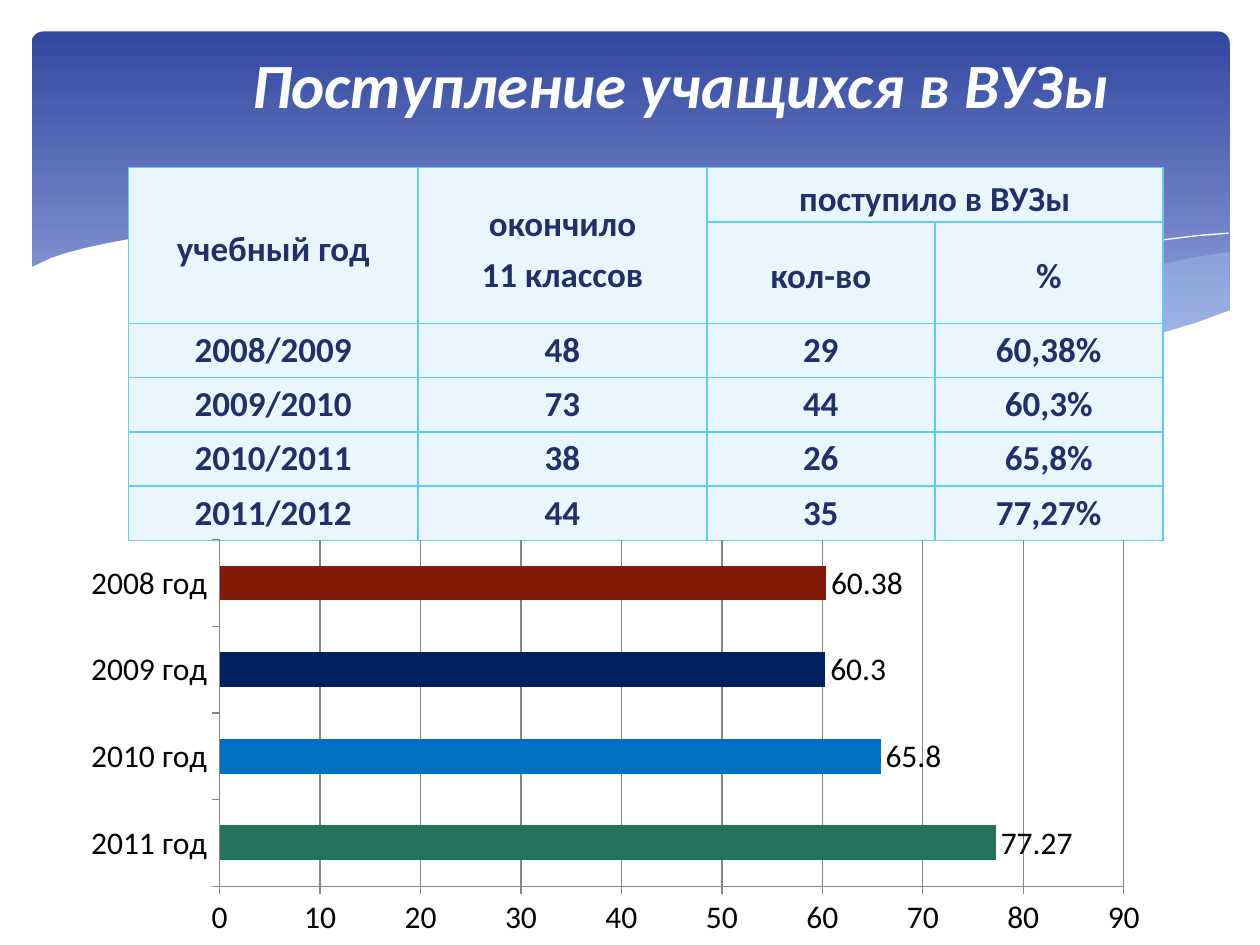
from dataclasses import dataclass
from typing import Optional

from lxml import etree
from pptx import Presentation
from pptx import util as u
from pptx.chart.data import CategoryChartData
from pptx.dml.color import RGBColor
from pptx.enum import chart as ch, shapes, text
from pptx.oxml import parse_xml
from pptx.oxml.ns import nsdecls, qn


@dataclass(frozen=True)
class Theme:
    font: str = "Calibri"
    white: str = "FFFFFF"
    black: str = "000000"
    banner_top: str = "31489F"
    banner_bottom: str = "95A4DE"
    wave: str = "B4DCFA"
    cell: str = "EAF6FD"
    border: str = "5ECCF3"
    table_text: str = "21306A"
    grid: str = "868686"
    title_size: int = 36
    table_size: int = 20
    chart_size: int = 18


@dataclass(frozen=True)
class Wave:
    points: tuple
    fill: Optional[str] = None
    alpha: int = 100


@dataclass(frozen=True)
class Bar:
    year: str
    percent: float
    color: str


T = Theme()

WAVES = (
    Wave(((702.7, 144), (682.6, 146.9), (663.1, 151.2), (641.5, 155.5), (619.9, 160.6),
          (579.6, 170.6), (542.2, 178.6), (508.3, 185), (475.9, 190.8), (497.5, 193.7),
          (527, 197.3), (553.7, 199.4), (586.1, 200.2), (614.9, 198.7), (640.1, 195.8),
          (663.1, 190.8), (683.3, 185), (702.7, 177.8)), T.wave, 29),
    Wave(((643, 196.6), (602.6, 190.8), (558, 182.9), (508.3, 172.8), (452.9, 159.8),
          (420.5, 151.9), (389.5, 146.2), (352.1, 139.7), (302.4, 134.6), (259.9, 133.2),
          (205.9, 137.5), (246.2, 143.3), (290.9, 151.9), (353.5, 167), (407.5, 178.6),
          (468, 190.1), (519.8, 197.3), (565.2, 200.2), (610.6, 199.4)), T.wave, 40),
    Wave(((222.5, 140.4), (261.4, 136.1), (311.8, 134.6), (367.2, 138.2), (419, 144),
          (478.8, 153.4), (547.2, 167.8), (598.3, 180.7), (653, 195.8))),
    Wave(((441.4, 185), (500.4, 169.2), (558.7, 155.5), (623.5, 143.3), (655.2, 138.2),
          (684.7, 134.6), (702, 133.2))),
    Wave(((703.4, 177.1), (684, 184.3), (662.4, 190.8), (638.6, 195.1), (612, 198),
          (582.5, 199.4), (547.9, 198), (509.8, 194.4), (466.6, 188.6), (416.9, 180),
          (362.2, 167.8), (321.8, 158.4), (281.5, 149), (244.8, 141.8), (210.2, 136.8),
          (165.6, 133.2), (127.4, 132.5), (95, 133.9), (76.3, 136.1), (61.2, 139),
          (48.2, 141.8), (37.4, 144.7), (28.8, 147.6), (16.6, 153.4), (16.6, 236.9),
          (703.4, 236.9)), T.white),
)

HEADER_ROWS = 2
COLUMNS = (165.6, 164.9, 130.3, 130.3)
ROWS = (31, 58, 31, 31, 31, 31)
ADMISSIONS = (
    ("учебный год", "окончило\n11 классов", "поступило в ВУЗы", ""),
    ("", "", "кол-во", "%"),
    ("2008/2009", "48", "29", "60,38%"),
    ("2009/2010", "73", "44", "60,3%"),
    ("2010/2011", "38", "26", "65,8%"),
    ("2011/2012", "44", "35", "77,27%"),
)
MERGES = ((0, 0, 1, 0), (0, 1, 1, 1), (0, 2, 0, 3))

BARS = (
    Bar("2011 год", 77.27, "23735D"),
    Bar("2010 год", 65.8, "0070C0"),
    Bar("2009 год", 60.3, "002060"),
    Bar("2008 год", 60.38, "821A08"),
)


def rgb(color: str) -> RGBColor:
    return RGBColor.from_string(color)


def write(tf, content: str, *, size: int, color: str, align, bold=True, italic=False,
          spacing: Optional[float] = None):
    p = tf.paragraphs[0]
    p.alignment = align
    p.line_spacing = spacing
    for i, line in enumerate(content.split("\n")):
        if i:
            p.add_line_break()
        r = p.add_run()
        r.text = line
        f = r.font
        f.name, f.size, f.bold, f.italic = T.font, u.Pt(size), bold, italic
        f.color.rgb = rgb(color)
    return p


def draw_banner(s) -> None:
    sp = s.shapes.add_shape(shapes.MSO_SHAPE.ROUNDED_RECTANGLE,
                            u.Pt(18), u.Pt(18), u.Pt(684.7), u.Pt(194.4))
    sp.adjustments[0] = 0.034
    sp.shadow.inherit = False
    sp.line.fill.background()
    sp.fill.gradient()
    sp.fill.gradient_angle = 270
    stops = sp.fill.gradient_stops
    for stop, color, position in zip(stops, (T.banner_top, T.banner_bottom), (0, 0.9)):
        stop.color.rgb = rgb(color)
        stop.position = position


def draw_wave(s, wave: Wave) -> None:
    """Draw a filled band, or an open white hairline when there is no fill."""
    first, *rest = [(u.Pt(x), u.Pt(y)) for x, y in wave.points]
    builder = s.shapes.build_freeform(*first)
    builder.add_line_segments(rest, close=wave.fill is not None)
    sp = builder.convert_to_shape()
    sp.shadow.inherit = False
    if wave.fill is None:
        sp.fill.background()
        sp.line.color.rgb = rgb(T.white)
        sp.line.width = u.Pt(0)
        return
    sp.line.fill.background()
    sp.fill.solid()
    sp.fill.fore_color.rgb = rgb(wave.fill)
    if wave.alpha < 100:
        color = sp.element.spPr.find(qn("a:solidFill"))[0]
        etree.SubElement(color, qn("a:alpha"), val=str(wave.alpha * 1000))


def draw_title(s) -> None:
    title = s.shapes.title
    s.shapes.element.append(title.element)  # in front of the banner
    title.left, title.top, title.width, title.height = map(u.Pt, (101.5, 22.3, 540.7, 51.1))
    tf = title.text_frame
    tf.word_wrap = False
    tf.auto_size = text.MSO_AUTO_SIZE.SHAPE_TO_FIT_TEXT
    tf.vertical_anchor = text.MSO_ANCHOR.MIDDLE
    p = write(tf, "Поступление учащихся в ВУЗы", size=T.title_size, color=T.white,
              align=text.PP_ALIGN.LEFT, italic=True)
    pPr = p._p.get_or_add_pPr()
    pPr.set("marL", "0")
    pPr.set("indent", str(u.Pt(35.3)))
    shadow = parse_xml(
        f'<a:effectLst {nsdecls("a")}><a:outerShdw blurRad="{u.Pt(4)}" dist="{u.Pt(3)}" '
        f'dir="2700000"><a:srgbClr val="{T.black}"><a:alpha val="60000"/></a:srgbClr>'
        '</a:outerShdw></a:effectLst>')
    p.runs[0].font._element.find(qn("a:solidFill")).addnext(shadow)


def add_borders(cell) -> None:
    tcPr = cell._tc.get_or_add_tcPr()
    for side in ("lnL", "lnR", "lnT", "lnB"):
        tcPr.append(parse_xml(
            f'<a:{side} {nsdecls("a")} w="{u.Pt(1)}"><a:solidFill>'
            f'<a:srgbClr val="{T.border}"/></a:solidFill></a:{side}>'))


def draw_table(s) -> None:
    table = s.shapes.add_table(len(ROWS), len(COLUMNS), u.Pt(73.4), u.Pt(95.8),
                               u.Pt(sum(COLUMNS)), u.Pt(sum(ROWS))).table
    for column, width in zip(table.columns, COLUMNS):
        column.width = u.Pt(width)
    for row, height in zip(table.rows, ROWS):
        row.height = u.Pt(height)
    for i, values in enumerate(ADMISSIONS):
        for j, value in enumerate(values):
            cell = table.cell(i, j)
            add_borders(cell)
            cell.fill.solid()
            cell.fill.fore_color.rgb = rgb(T.cell)
            cell.vertical_anchor = text.MSO_ANCHOR.MIDDLE
            cell.margin_left = cell.margin_right = u.Pt(5)
            cell.margin_top = cell.margin_bottom = u.Pt(0)
            if value:
                write(cell.text_frame, value, size=T.table_size, color=T.table_text,
                      align=text.PP_ALIGN.CENTER, spacing=1.2 if i < HEADER_ROWS else None)
    for top, left, bottom, right in MERGES:
        table.cell(top, left).merge(table.cell(bottom, right))


def draw_chart(s) -> None:
    data = CategoryChartData()
    data.categories = [bar.year for bar in BARS]
    data.add_series("Series 1", [bar.percent for bar in BARS])
    chart = s.shapes.add_chart(ch.XL_CHART_TYPE.BAR_CLUSTERED, u.Pt(39.6), u.Pt(303.8),
                               u.Pt(624.2), u.Pt(236.2), data).chart
    chart.has_title = chart.has_legend = False
    chart.font.name, chart.font.size = T.font, u.Pt(T.chart_size)
    chart.font.color.rgb = rgb(T.black)
    plot = chart.plots[0]
    plot.gap_width = 150
    plot.vary_by_categories = False
    plot.has_data_labels = True
    plot.data_labels.show_value = True
    for i, bar in enumerate(BARS):
        fill = plot.series[0].points[i].format.fill
        fill.solid()
        fill.fore_color.rgb = rgb(bar.color)
    value_axis, category_axis = chart.value_axis, chart.category_axis
    value_axis.minimum_scale = 0
    value_axis.has_major_gridlines = True
    for axis in (value_axis, category_axis):
        axis.major_tick_mark = ch.XL_TICK_MARK.OUTSIDE
    for part in (value_axis, category_axis, value_axis.major_gridlines):
        part.format.line.color.rgb = rgb(T.grid)
        part.format.line.width = u.Pt(0.75)


def main() -> None:
    prs = Presentation()
    prs.slide_width, prs.slide_height = u.Pt(720), u.Pt(540)
    s = prs.slides.add_slide(prs.slide_layouts[5])
    draw_banner(s)
    for wave in WAVES:
        draw_wave(s, wave)
    draw_title(s)
    draw_table(s)
    draw_chart(s)
    prs.save("out.pptx")


if __name__ == "__main__":
    main()
